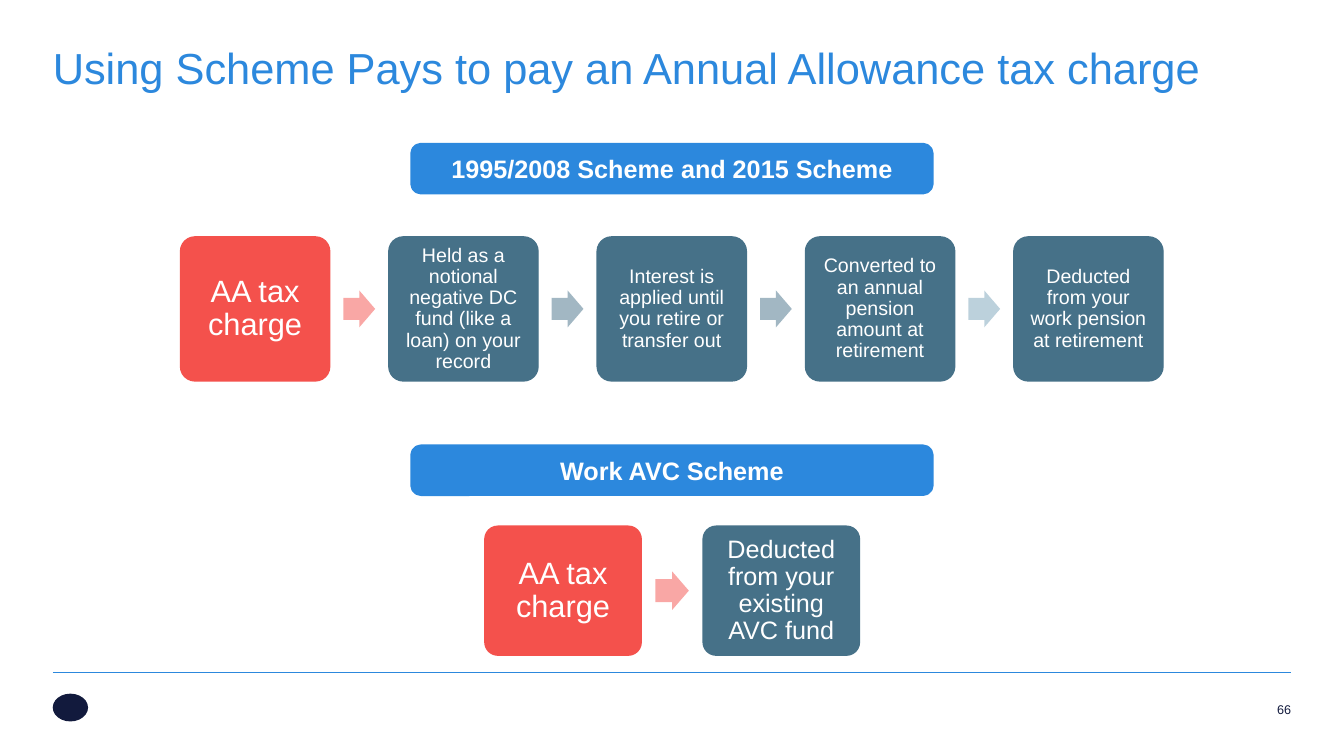
from lxml import etree
from pptx import Presentation, util as u
from pptx.dml.color import RGBColor
from pptx.enum import shapes, text
from pptx.oxml.ns import qn

COLOURS = {
    "blue": "2C88DD",
    "navy": "121A3D",
    "red": "F4514C",
    "slate": "467188",
    "pale": "7BA4BB",
    "white": "FFFFFF",
}
CENTRE = text.PP_ALIGN.CENTER
MIDDLE = text.MSO_ANCHOR.MIDDLE
TOP = text.MSO_ANCHOR.TOP


def colour(name):
    return RGBColor.from_string(COLOURS[name])


def write(shape, words, size, font_colour="white", bold=False, align=CENTRE,
          anchor=MIDDLE, inset=0, spacing=1.0):
    frame = shape.text_frame
    frame.word_wrap = True
    frame.auto_size = text.MSO_AUTO_SIZE.NONE
    frame.vertical_anchor = anchor
    frame.margin_left = frame.margin_right = u.Cm(inset)
    frame.margin_top = frame.margin_bottom = u.Cm(inset)
    paragraph = frame.paragraphs[0]
    paragraph.alignment = align
    paragraph.line_spacing = spacing
    run = paragraph.add_run()
    run.text = words
    run.font.name = "Arial"
    run.font.size = u.Pt(size)
    run.font.bold = bold
    run.font.color.rgb = colour(font_colour)


def place(shape, left, top, width, height):
    shape.left, shape.top = u.Cm(left), u.Cm(top)
    shape.width, shape.height = u.Cm(width), u.Cm(height)


def add_block(slide, kind, box, fill, line_width=None):
    shape = slide.shapes.add_shape(kind, *map(u.Cm, box))
    shape.shadow.inherit = False
    shape.fill.solid()
    shape.fill.fore_color.rgb = colour(fill)
    if line_width:
        shape.line.color.rgb = colour(fill)
        shape.line.width = u.Pt(line_width)
    else:
        shape.line.fill.background()
    return shape


def add_banner(slide, top, words):
    box = (10.42, top, 13.03, 1.14)
    banner = add_block(slide, shapes.MSO_SHAPE.ROUNDED_RECTANGLE, box, "blue", 4.5)
    write(banner, words, 18, bold=True, inset=0.13)


def add_arrow(slide, box, fill):
    arrow = add_block(slide, shapes.MSO_SHAPE.RIGHT_ARROW, box, fill)
    arrow.adjustments[0] = 0.6
    arrow.adjustments[1] = 0.5
    fill_colour = arrow._element.spPr.find(".//" + qn("a:srgbClr"))
    etree.SubElement(fill_colour, qn("a:alpha"), val="50000")


def add_flow(slide, steps, arrow_fills, left, top, pitch, step_size, arrow_size):
    width, height = step_size
    arrow_width, arrow_height = arrow_size
    for index, (words, fill, size, inset) in enumerate(steps):
        step_left = left + index * pitch
        step = add_block(slide, shapes.MSO_SHAPE.ROUNDED_RECTANGLE,
                         (step_left, top, width, height), fill, 1)
        step.adjustments[0] = 0.1
        write(step, words, size, inset=inset, spacing=0.9)
        if index < len(arrow_fills):
            arrow_left = step_left + (width + pitch - arrow_width) / 2
            arrow_top = top + (height - arrow_height) / 2
            add_arrow(slide, (arrow_left, arrow_top, arrow_width, arrow_height),
                      arrow_fills[index])


def add_footer(slide, number):
    rule = slide.shapes.add_connector(
        shapes.MSO_CONNECTOR.STRAIGHT,
        u.Cm(1.33), u.Cm(16.94), u.Cm(32.54), u.Cm(16.94))
    rule.line.color.rgb = colour("blue")
    rule.line.width = u.Pt(0.75)
    etree.SubElement(rule._element.spPr, qn("a:effectLst"))
    add_block(slide, shapes.MSO_SHAPE.OVAL, (1.33, 17.48, 0.89, 0.7), "navy")
    number_box = slide.shapes.add_textbox(u.Cm(30.3), u.Cm(17.68), u.Cm(2.24), u.Cm(0.61))
    write(number_box, number, 9, font_colour="navy", align=text.PP_ALIGN.RIGHT, anchor=TOP)


def main():
    presentation = Presentation()
    presentation.slide_width = u.Cm(33.87)
    presentation.slide_height = u.Cm(19.05)
    slide = presentation.slides.add_slide(presentation.slide_layouts[5])

    title = slide.shapes.title
    place(title, 1.33, 1.04, 31.2, 2.87)
    write(title, "Using Scheme Pays to pay an Annual Allowance tax charge", 31,
          font_colour="blue", align=text.PP_ALIGN.LEFT, anchor=TOP)
    add_footer(slide, "66")

    charge = ("AA tax charge", "red", 22, 0.23)
    scheme_steps = [charge] + [(words, "slate", 14, 0.15) for words in (
        "Held as a notional negative DC fund (like a loan) on your record",
        "Interest is applied until you retire or transfer out",
        "Converted to an annual pension amount at retirement",
        "Deducted from your work pension at retirement",
    )]
    avc_steps = [charge, ("Deducted from your existing AVC fund", "slate", 18, 0.18)]

    add_banner(slide, 3.68, "1995/2008 Scheme and 2015 Scheme")
    add_flow(slide, scheme_steps, ["red", "slate", "slate", "pale"],
             4.55, 5.97, 5.25, (3.76, 3.63), (0.8, 0.93))
    add_banner(slide, 11.28, "Work AVC Scheme")
    add_flow(slide, avc_steps, ["red"],
             12.22, 13.26, 5.5, (3.94, 3.25), (0.84, 0.97))

    presentation.save("out.pptx")


if __name__ == "__main__":
    main()
